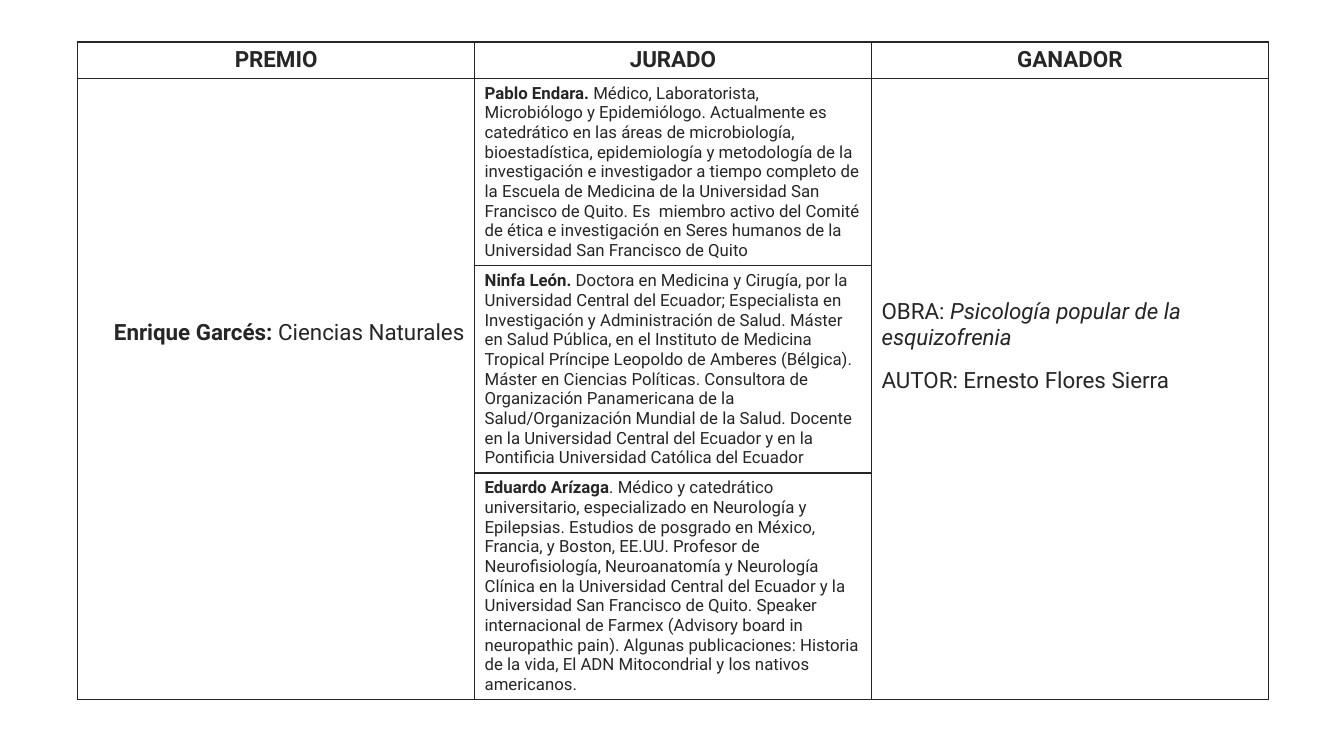
from lxml import etree
from pptx import Presentation
from pptx.dml.color import RGBColor
from pptx.enum.text import MSO_ANCHOR, PP_ALIGN
from pptx.oxml.ns import qn
from pptx.util import Pt

CENTER, LEFT, RIGHT = PP_ALIGN.CENTER, PP_ALIGN.LEFT, PP_ALIGN.RIGHT
TOP = MSO_ANCHOR.TOP
EMU_PER_PX = 9525
COLORS = {"ink": "262626"}

HEADERS = ["PREMIO", "JURADO", "GANADOR"]
JURY = [
    ("Pablo Endara.", " Médico, Laboratorista, Microbiólogo y Epidemiólogo. Actualmente es "
     "catedrático en las áreas de microbiología, bioestadística, epidemiología y metodología "
     "de la investigación e investigador a tiempo completo de la Escuela de Medicina de la "
     "Universidad San Francisco de Quito. Es  miembro activo del Comité de ética e "
     "investigación en Seres humanos de la Universidad San Francisco de Quito"),
    ("Ninfa León.", " Doctora en Medicina y Cirugía, por la Universidad Central del Ecuador; "
     "Especialista en Investigación y Administración de Salud. Máster en Salud Pública, en el "
     "Instituto de Medicina Tropical Príncipe Leopoldo de Amberes (Bélgica). Máster en "
     "Ciencias Políticas. Consultora de Organización Panamericana de la Salud/Organización "
     "Mundial de la Salud. Docente en la Universidad Central del Ecuador y en la Pontificia "
     "Universidad Católica del Ecuador"),
    ("Eduardo Arízaga", ". Médico y catedrático universitario, especializado en Neurología y "
     "Epilepsias. Estudios de posgrado en México, Francia, y Boston, EE.UU. Profesor de "
     "Neurofisiología, Neuroanatomía y Neurología Clínica en la Universidad Central del "
     "Ecuador y la Universidad San Francisco de Quito. Speaker internacional de Farmex "
     "(Advisory board in neuropathic pain). Algunas publicaciones: Historia de la vida, El "
     "ADN Mitocondrial y los nativos americanos."),
]


def px(value):
    return value * EMU_PER_PX


def write(paragraph, text, size=16, bold=False, italic=False, color="ink", font="Roboto"):
    run = paragraph.add_run()
    run.text = text
    run.font.name = font
    run.font.size = Pt(size)
    run.font.bold = bold
    run.font.italic = italic
    run.font.color.rgb = RGBColor.from_string(COLORS[color])


class AwardSlide:
    def __init__(self, presentation):
        self.border_color = COLORS["ink"]
        self.border_width = Pt(1)
        self.slide = presentation.slides.add_slide(presentation.slide_layouts[6])

    def add_table(self, left, top, column_width, row_heights, columns):
        frame = self.slide.shapes.add_table(
            len(row_heights), columns, px(left), px(top),
            px(column_width * columns), px(sum(row_heights)))
        table = frame.table
        table.first_row = table.horz_banding = False
        for column in table.columns:
            column.width = px(column_width)
        for row, height in zip(table.rows, row_heights):
            row.height = px(height)
        for cell in table.iter_cells():
            cell.fill.background()
            self.add_borders(cell)
        return table

    def add_borders(self, cell):
        properties = cell._tc.get_or_add_tcPr()
        for index, side in enumerate(("lnL", "lnR", "lnT", "lnB")):
            line = etree.Element(qn(f"a:{side}"), w=str(self.border_width))
            fill = etree.SubElement(line, qn("a:solidFill"))
            etree.SubElement(fill, qn("a:srgbClr"), val=self.border_color)
            properties.insert(index, line)

    def fill_cell(self, cell, paragraphs, align=LEFT, margin_top=5, space_after=0):
        cell.vertical_anchor = TOP
        cell.margin_top = px(margin_top)
        text_frame = cell.text_frame
        for index, runs in enumerate(paragraphs):
            paragraph = text_frame.add_paragraph() if index else text_frame.paragraphs[0]
            paragraph.alignment = align
            paragraph.space_after = Pt(space_after)
            for text, style in runs:
                write(paragraph, text, **style)


def main():
    presentation = Presentation()
    presentation.slide_width = px(1280)
    presentation.slide_height = px(720)
    award = AwardSlide(presentation)
    table = award.add_table(74, 40, 378, [34, 178, 197, 216], len(HEADERS))

    for column, header in enumerate(HEADERS):
        award.fill_cell(table.cell(0, column), [[(header, {"bold": True})]], align=CENTER)
    for row, (name, biography) in enumerate(JURY, start=1):
        runs = [(name, {"size": 12, "bold": True}), (biography, {"size": 12})]
        award.fill_cell(table.cell(row, 1), [runs])
    for column in (0, 2):
        table.cell(1, column).merge(table.cell(len(JURY), column))

    prize = [("Enrique Garcés: ", {"bold": True}), ("Ciencias Naturales", {})]
    award.fill_cell(table.cell(1, 0), [prize], align=RIGHT, margin_top=230)
    work = [("OBRA: ", {}), ("Psicología popular de la esquizofrenia", {"italic": True})]
    author = [("AUTOR: Ernesto Flores Sierra", {})]
    award.fill_cell(table.cell(1, 2), [work, author], margin_top=210, space_after=12)

    presentation.save("out.pptx")


if __name__ == "__main__":
    main()
